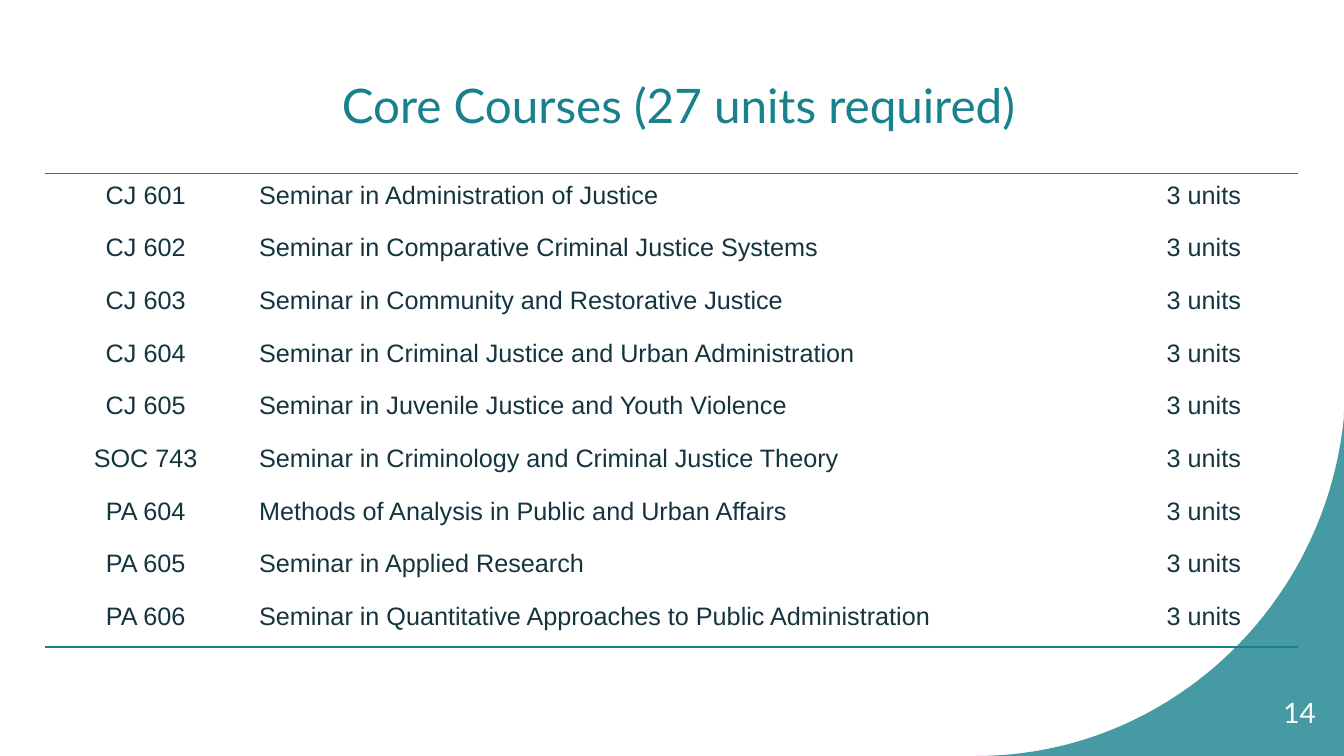
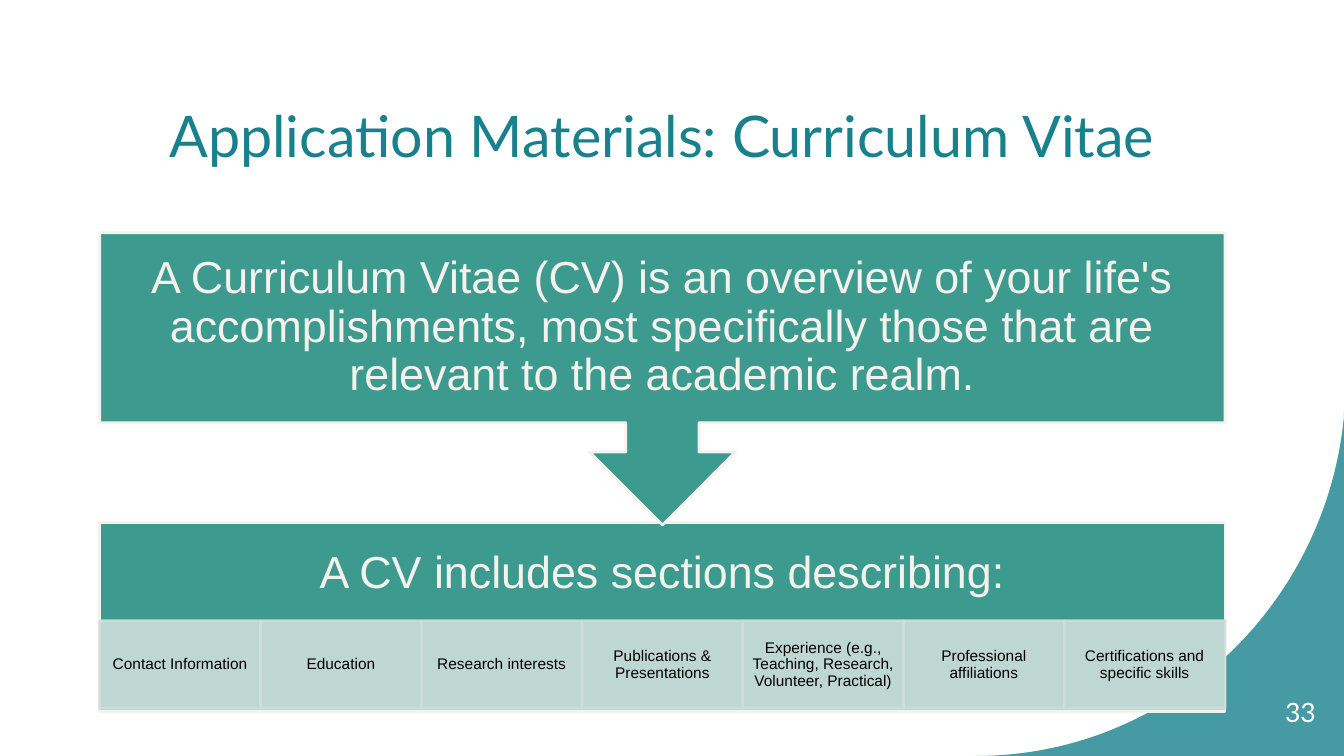
from lxml.etree import SubElement
from pptx import Presentation
from pptx.dml.color import RGBColor
from pptx.enum.shapes import MSO_SHAPE
from pptx.enum.text import MSO_ANCHOR, PP_ALIGN
from pptx.oxml.ns import qn
from pptx.util import Inches, Pt

COLORS = {
    "teal": "18818C",
    "green": "3C9A8F",
    "pale": "CEDEDB",
    "cream": "F4F2EC",
    "ink": "14353E",
    "white": "FFFFFF",
    "black": "000000",
}
HEADING_FONT, BODY_FONT = "Lato", "Arial"
NO_TABLE_STYLE = "{2D5ABB26-0587-4C30-8999-92F81FD0307C}"

COURSES = [
    ("CJ 601", "Seminar in Administration of Justice"),
    ("CJ 602", "Seminar in Comparative Criminal Justice Systems"),
    ("CJ 603", "Seminar in Community and Restorative Justice"),
    ("CJ 604", "Seminar in Criminal Justice and Urban Administration"),
    ("CJ 605", "Seminar in Juvenile Justice and Youth Violence"),
    ("SOC 743", "Seminar in Criminology and Criminal Justice Theory"),
    ("PA 604", "Methods of Analysis in Public and Urban Affairs"),
    ("PA 605", "Seminar in Applied Research"),
    ("PA 606", "Seminar in Quantitative Approaches to Public Administration"),
]
COURSE_UNITS = "3 units"
COLUMN_WIDTHS = (1.99, 8.57, 1.86)
COLUMN_ALIGNMENTS = (PP_ALIGN.CENTER, PP_ALIGN.LEFT, PP_ALIGN.CENTER)

CV_OVERVIEW = (
    "A Curriculum Vitae (CV) is an overview of your life's accomplishments, "
    "most specifically those that are relevant to the academic realm."
)
CV_HEADING = "A CV includes sections describing:"
CV_SECTIONS = [
    "Contact Information",
    "Education",
    "Research interests",
    "Publications & Presentations",
    "Experience (e.g., Teaching, Research, Volunteer, Practical)",
    "Professional affiliations",
    "Certifications and specific skills",
]

CORNER_CURVE = ((9.68, 7.5), (11.58, 7.5), (13.15, 6.02), (13.33, 4.13))
CORNER_STEPS = 60


def color(name):
    return RGBColor.from_string(COLORS[name])


def set_alpha(fill_parent, percent):
    tone = fill_parent.find(qn("a:solidFill"))[0]
    SubElement(tone, qn("a:alpha")).set("val", str(percent * 1000))


def write(frame, text, size, tone, font=BODY_FONT, align=PP_ALIGN.CENTER, spacing=0.9):
    para = frame.paragraphs[0]
    para.alignment = align
    para.line_spacing = spacing
    span = para.add_run()
    span.text = text
    span.font.size = Pt(size)
    span.font.name = font
    span.font.color.rgb = color(tone)


def set_frame(frame, left, top, right, bottom):
    frame.word_wrap = True
    frame.vertical_anchor = MSO_ANCHOR.MIDDLE
    frame.margin_left, frame.margin_top = Inches(left), Inches(top)
    frame.margin_right, frame.margin_bottom = Inches(right), Inches(bottom)


def add_label(page, area, text, size, tone, align):
    box = page.shapes.add_textbox(*map(Inches, area))
    set_frame(box.text_frame, 0.1, 0.1, 0.1, 0.1)
    write(box.text_frame, text, size, tone, HEADING_FONT, align)


def add_block(page, preset, area, fill, line, alpha=None):
    block = page.shapes.add_shape(preset, *map(Inches, area))
    block.shadow.inherit = False
    block.fill.solid()
    block.fill.fore_color.rgb = color(fill)
    block.line.color.rgb = color(line)
    block.line.width = Pt(2)
    if alpha:
        properties = block._element.spPr
        set_alpha(properties, alpha)
        set_alpha(properties.find(qn("a:ln")), alpha)
    return block


def curve_point(step):
    t = step / CORNER_STEPS
    weights = ((1 - t) ** 3, 3 * t * (1 - t) ** 2, 3 * t**2 * (1 - t), t**3)
    return tuple(
        Inches(sum(w * point[axis] for w, point in zip(weights, CORNER_CURVE)))
        for axis in (0, 1)
    )


def add_corner(page):
    points = [curve_point(step) for step in range(CORNER_STEPS + 1)]
    points += [(Inches(13.33), Inches(4.08)), (Inches(13.33), Inches(7.5))]
    builder = page.shapes.build_freeform(*points[0])
    builder.add_line_segments(points[1:], close=True)
    corner = builder.convert_to_shape()
    corner.shadow.inherit = False
    corner.fill.solid()
    corner.fill.fore_color.rgb = color("teal")
    corner.line.fill.background()
    set_alpha(corner._element.spPr, 80)


def add_page(deck, title, title_area, title_size, number, number_size):
    page = deck.slides.add_slide(deck.slide_layouts[6])
    add_corner(page)
    add_label(page, title_area, title, title_size, "teal", PP_ALIGN.CENTER)
    add_label(page, (12.35, 6.8, 0.8, 0.57), number, number_size, "white", PP_ALIGN.RIGHT)
    return page


def add_border(cell, side):
    border = SubElement(cell._tc.get_or_add_tcPr(), qn(f"a:{side}"))
    border.set("w", str(Pt(1)))
    fill = SubElement(border, qn("a:solidFill"))
    SubElement(fill, qn("a:srgbClr")).set("val", COLORS["teal"])


def add_course_table(page):
    rows = [(*course, COURSE_UNITS) for course in COURSES]
    area = map(Inches, (0.45, 1.72, sum(COLUMN_WIDTHS), 4.7))
    table = page.shapes.add_table(len(rows), len(COLUMN_WIDTHS), *area).table
    table.first_row = table.horz_banding = False
    table._tbl.tblPr.find(qn("a:tableStyleId")).text = NO_TABLE_STYLE
    for column, width in zip(table.columns, COLUMN_WIDTHS):
        column.width = Inches(width)
    for row_index, row in enumerate(rows):
        for column_index, text in enumerate(row):
            cell = table.cell(row_index, column_index)
            cell.margin_left = cell.margin_right = Inches(0.13)
            cell.margin_top = cell.margin_bottom = Inches(0.08)
            if row_index == 0:
                add_border(cell, "lnT")
            if row_index == len(rows) - 1:
                add_border(cell, "lnB")
            cell.fill.background()
            write(cell.text_frame, text, 18, "ink",
                  align=COLUMN_ALIGNMENTS[column_index], spacing=1.0)


def add_cv_diagram(page):
    left, width = 0.99, 11.16
    summary = add_block(page, MSO_SHAPE.RECTANGLE, (left, 5.18, width, 1.88), "green", "cream")
    set_frame(summary.text_frame, 0.25, 0.25, 0.25, 1.11)
    write(summary.text_frame, CV_HEADING, 32, "cream")

    section_width = width / len(CV_SECTIONS)
    for index, section in enumerate(CV_SECTIONS):
        area = (left + index * section_width, 6.16, section_width, 0.87)
        box = add_block(page, MSO_SHAPE.RECTANGLE, area, "pale", "pale", 90)
        set_frame(box.text_frame, 0.09, 0.02, 0.09, 0.02)
        write(box.text_frame, section, 11, "black")

    overview = add_block(page, MSO_SHAPE.DOWN_ARROW_CALLOUT,
                         (left, 2.31, width, 2.9), "green", "cream")
    set_frame(overview.text_frame, 0.25, 0.25, 0.25, 0.25)
    write(overview.text_frame, CV_OVERVIEW, 32, "cream")


def main():
    deck = Presentation()
    deck.slide_width, deck.slide_height = Inches(13.33), Inches(7.5)
    add_course_table(add_page(deck, "Core Courses (27 units required)",
                              (0.52, 0.65, 12.42, 0.84), 34, "14", 20))
    add_cv_diagram(add_page(deck, "Application Materials: Curriculum Vitae",
                            (0.99, 0.65, 11.16, 1.45), 41, "33", 19))
    deck.save("out.pptx")


if __name__ == "__main__":
    main()
